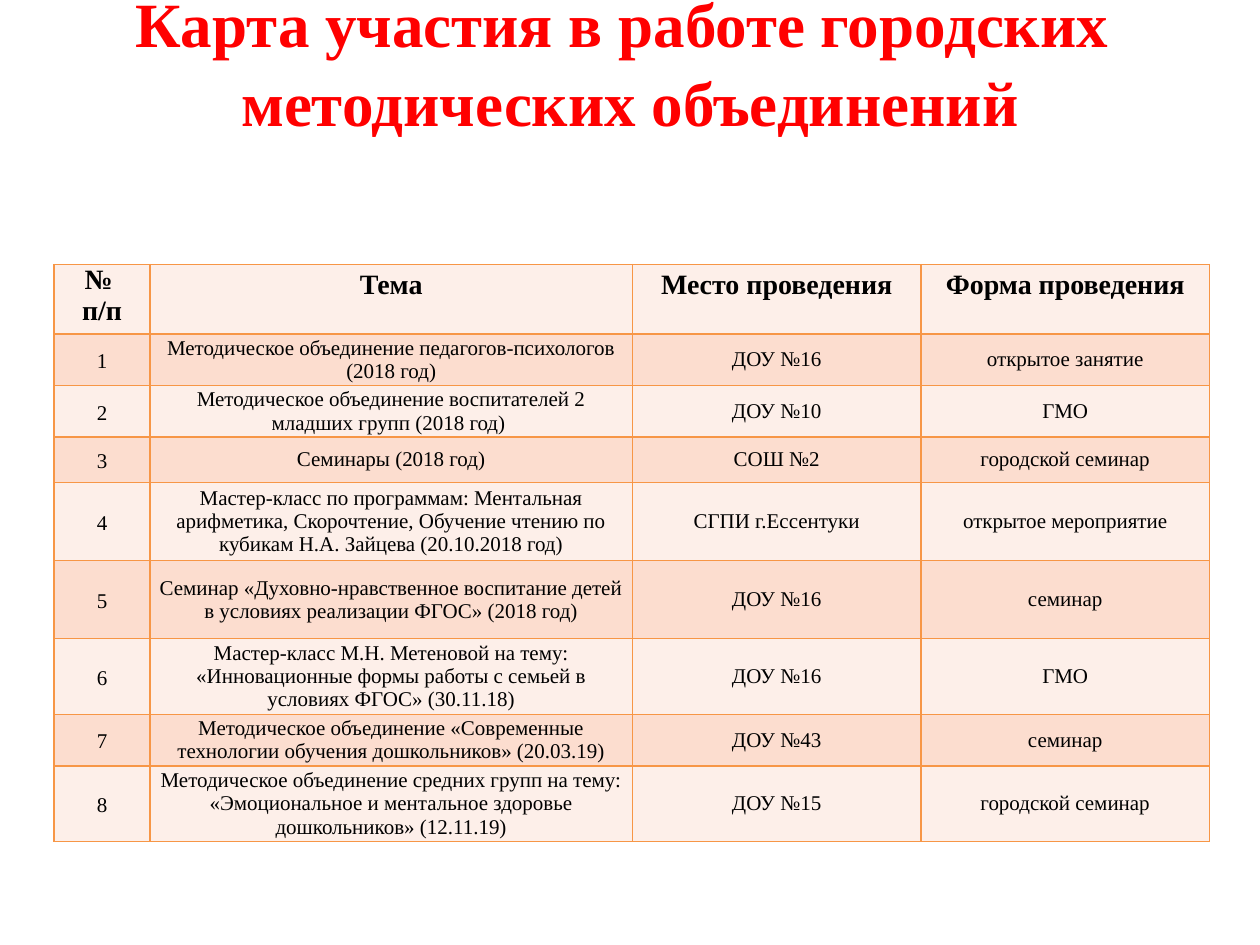
from lxml.etree import SubElement
from pptx import Presentation
from pptx.dml.color import RGBColor
from pptx.enum.text import MSO_ANCHOR, PP_ALIGN
from pptx.oxml.ns import qn
from pptx.util import Inches, Pt

FONT = "Times New Roman"
HEAD = ["№ \nп/п", "Тема", "Место проведения", "Форма проведения"]
EVENTS = [
    ("Методическое объединение педагогов-психологов (2018 год)",
     "ДОУ №16", "открытое занятие"),
    ("Методическое объединение воспитателей 2 младших групп (2018 год) ",
     "ДОУ №10", "ГМО"),
    ("Семинары (2018 год)", "СОШ №2", "городской семинар"),
    ("Мастер-класс по программам: Ментальная арифметика, Скорочтение, "
     "Обучение чтению по кубикам Н.А. Зайцева (20.10.2018 год)",
     "СГПИ г.Ессентуки", "открытое мероприятие"),
    ("Семинар «Духовно-нравственное воспитание детей в условиях "
     "реализации ФГОС» (2018 год)", "ДОУ №16", "семинар"),
    ("Мастер-класс М.Н. Метеновой на тему: «Инновационные формы работы "
     "с семьей в условиях ФГОС» (30.11.18)", "ДОУ №16", "ГМО"),
    ("Методическое объединение «Современные технологии обучения "
     "дошкольников» (20.03.19)", "ДОУ №43", "семинар"),
    ("Методическое объединение средних групп на тему: «Эмоциональное и "
     "ментальное здоровье дошкольников» (12.11.19)",
     "ДОУ №15", "городской семинар"),
]
WIDTHS = [0.76, 3.83, 2.29, 2.29]
HEIGHTS = [0.55, 0.41, 0.41, 0.36, 0.62, 0.62, 0.41, 0.41, 0.41]


def paint(target, color):
    """Give a font or a fill a solid colour."""
    if hasattr(target, "solid"):
        target.solid()
        target.fore_color.rgb = RGBColor.from_string(color)
    else:
        target.color.rgb = RGBColor.from_string(color)


def style(frame, size, color, bold, space=None):
    """Centre and format every paragraph of a text frame."""
    for para in frame.paragraphs:
        para.alignment = PP_ALIGN.CENTER
        if space:
            para.line_spacing = space
        for run in para.runs:
            run.font.name = FONT
            run.font.size = Pt(size)
            run.font.bold = bold
            paint(run.font, color)


def border(cell, color, width):
    """Draw the four sides of a cell."""
    props = cell._tc.get_or_add_tcPr()
    for spot, side in enumerate(("a:lnL", "a:lnR", "a:lnT", "a:lnB")):
        line = SubElement(props, qn(side), w=str(Pt(width)))
        fill = SubElement(line, qn("a:solidFill"))
        SubElement(fill, qn("a:srgbClr"), val=color)
        props.insert(spot, line)


def add_title(slide, left, top, width, height):
    """Place the two-line heading in the upper part of its box."""
    box = slide.shapes.add_textbox(
        Inches(left), Inches(top), Inches(width), Inches(height))
    frame = box.text_frame
    frame.word_wrap = True
    frame.vertical_anchor = MSO_ANCHOR.MIDDLE
    frame.margin_top = 0
    frame.margin_bottom = Inches(0.6)
    frame.text = "Карта участия в работе городских \vметодических объединений"
    style(frame, 36, "FF0000", True, 1.05)


def add_events(slide, left, top):
    """Place the table of events with banded rows."""
    rows = [HEAD] + [(str(num), *event) for num, event in enumerate(EVENTS, 1)]
    table = slide.shapes.add_table(
        len(rows), len(HEAD), Inches(left), Inches(top),
        Inches(sum(WIDTHS)), Inches(sum(HEIGHTS))).table
    for col, width in zip(table.columns, WIDTHS):
        col.width = Inches(width)
    for row, height in zip(table.rows, HEIGHTS):
        row.height = Inches(height)
    for i, row in enumerate(rows):
        for j, text in enumerate(row):
            cell = table.cell(i, j)
            cell.margin_left = cell.margin_right = Inches(0.07)
            cell.margin_top = cell.margin_bottom = 0
            cell.vertical_anchor = MSO_ANCHOR.MIDDLE if i else MSO_ANCHOR.TOP
            cell.text_frame.text = text
            loose = (i == 0) != (j == 0)
            style(cell.text_frame, 12 if i else 16, "000000", i == 0,
                  1.15 if loose else None)
            paint(cell.fill, "FCDDCF" if i % 2 else "FDEFE9")
            border(cell, "F79646", 1)


def main():
    """Build the slide and save it."""
    deck = Presentation()
    deck.slide_width, deck.slide_height = Inches(10), Inches(7.5)
    slide = deck.slides.add_slide(deck.slide_layouts[6])
    add_title(slide, 0, 0, 10, 1.55)
    add_events(slide, 0.43, 2.1)
    deck.save("out.pptx")


if __name__ == "__main__":
    main()
